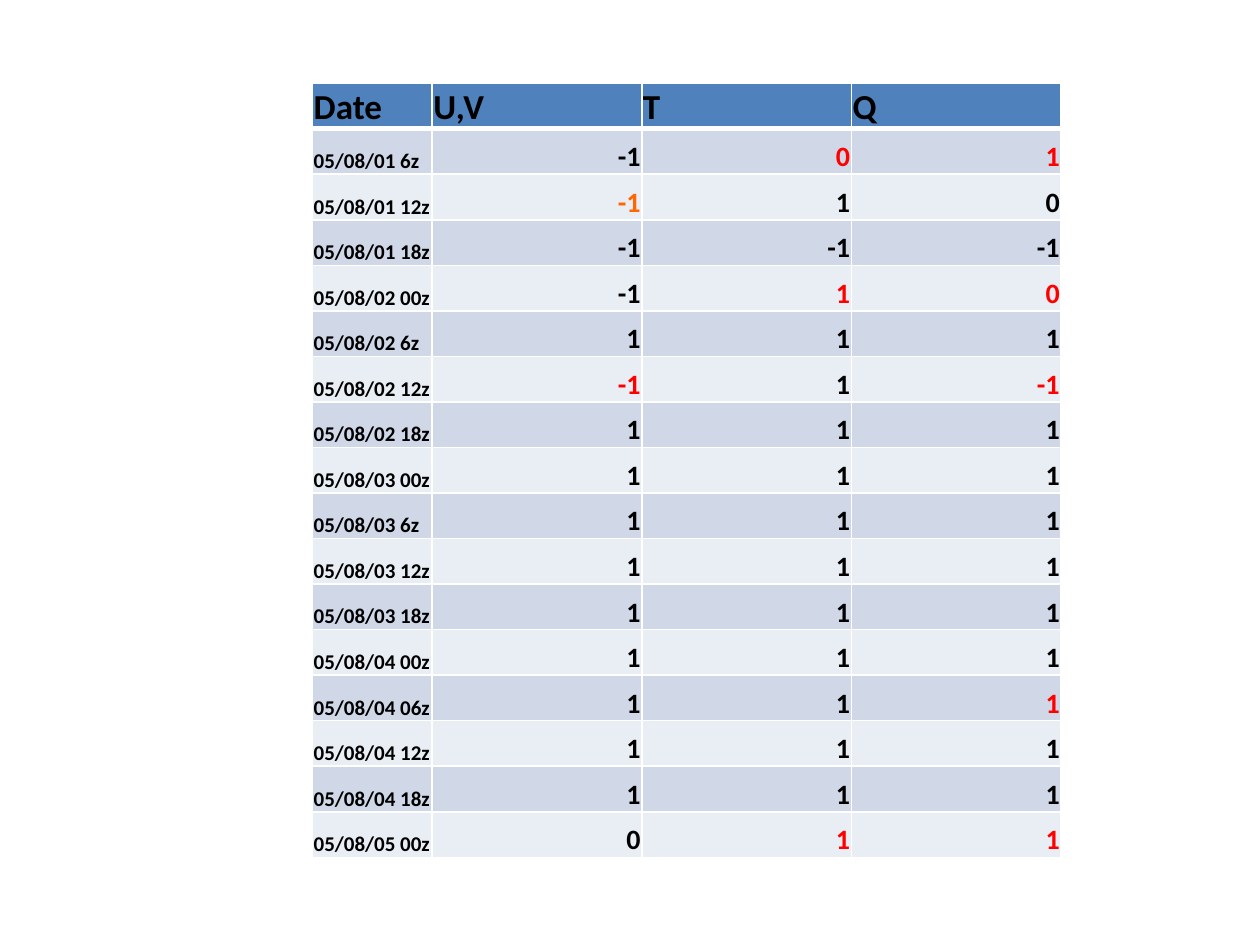
from lxml.etree import SubElement as Sub
from pptx import Presentation
from pptx.dml.color import RGBColor as RGB
from pptx.enum.text import MSO_ANCHOR as Anchor, PP_ALIGN as Align
from pptx.oxml.ns import qn
from pptx.util import Inches, Pt

HUES = {
    "head": "4F81BD",
    "odd": "D0D8E8",
    "even": "E9EDF4",
    "rule": "FFFFFF",
    "text": "000000",
    "red": "FF0000",
    "orange": "FF6600",
}
HEADS = ["Date", "U,V", "T", "Q"]
SCORES = [
    ("05/08/01 6z", -1, 0, 1),
    ("05/08/01 12z", -1, 1, 0),
    ("05/08/01 18z", -1, -1, -1),
    ("05/08/02 00z", -1, 1, 0),
    ("05/08/02 6z", 1, 1, 1),
    ("05/08/02 12z", -1, 1, -1),
    ("05/08/02 18z", 1, 1, 1),
    ("05/08/03 00z", 1, 1, 1),
    ("05/08/03 6z", 1, 1, 1),
    ("05/08/03 12z", 1, 1, 1),
    ("05/08/03 18z", 1, 1, 1),
    ("05/08/04 00z", 1, 1, 1),
    ("05/08/04 06z", 1, 1, 1),
    ("05/08/04 12z", 1, 1, 1),
    ("05/08/04 18z", 1, 1, 1),
    ("05/08/05 00z", 0, 1, 1),
]
MARKS = {
    ("05/08/01 6z", "T"): "red",
    ("05/08/01 6z", "Q"): "red",
    ("05/08/01 12z", "U,V"): "orange",
    ("05/08/02 00z", "T"): "red",
    ("05/08/02 00z", "Q"): "red",
    ("05/08/02 12z", "U,V"): "red",
    ("05/08/02 12z", "Q"): "red",
    ("05/08/04 06z", "Q"): "red",
    ("05/08/05 00z", "T"): "red",
    ("05/08/05 00z", "Q"): "red",
}
SHARES = [0.16, 0.28, 0.28, 0.28]


def hue(name):
    return RGB.from_string(HUES[name])


def rule_cell(cell, top, base):
    props = cell._tc.get_or_add_tcPr()
    for side, size in (("L", 1), ("R", 1), ("T", top), ("B", base)):
        line = Sub(props, qn(f"a:ln{side}"), w=str(Pt(size)))
        fill = Sub(line, qn("a:solidFill"))
        Sub(fill, qn("a:srgbClr"), val=HUES["rule"])


def fill_cell(cell, text, back, size, tone, align):
    cell.margin_left = cell.margin_right = cell.margin_top = Inches(0.01)
    cell.margin_bottom = 0
    cell.vertical_anchor = Anchor.BOTTOM
    cell.fill.solid()
    cell.fill.fore_color.rgb = hue(back)
    cell.text = str(text)
    para = cell.text_frame.paragraphs[0]
    para.alignment = align
    para.font.name = "Calibri"
    para.font.size = Pt(size)
    para.font.bold = True
    para.font.color.rgb = hue(tone)


def add_scores(slide, left, top, width, height):
    rows = [HEADS, *SCORES]
    frame = slide.shapes.add_table(len(rows), len(HEADS), left, top, width, height)
    table = frame.table
    for col, share in zip(table.columns, SHARES):
        col.width = int(width * share)
    for i, row in enumerate(rows):
        table.rows[i].height = int(height / len(rows))
        back = "head" if i == 0 else "odd" if i % 2 else "even"
        for j, text in enumerate(row):
            cell = table.cell(i, j)
            rule_cell(cell, 3 if i == 1 else 1, 3 if i == 0 else 1)
            size = 20 if i == 0 else 16 if j else 12
            tone = MARKS.get((row[0], HEADS[j]), "text")
            align = Align.RIGHT if i and j else Align.LEFT
            fill_cell(cell, text, back, size, tone, align)


def main():
    deck = Presentation()
    deck.slide_width, deck.slide_height = Inches(10), Inches(7.5)
    slide = deck.slides.add_slide(deck.slide_layouts[6])
    add_scores(slide, Inches(2.48), Inches(0.66), Inches(5.94), Inches(6.15))
    deck.save("out.pptx")


if __name__ == "__main__":
    main()
